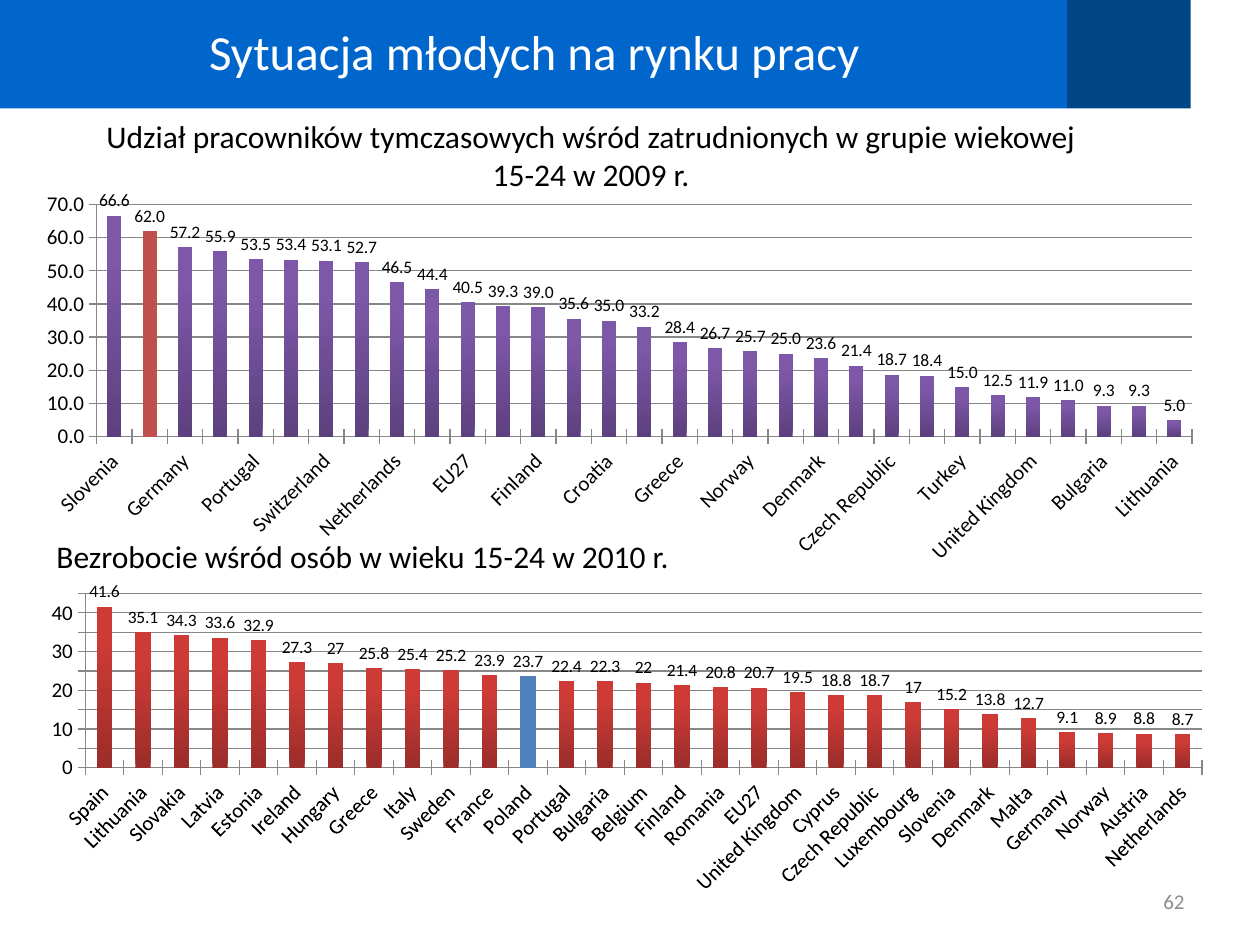
from dataclasses import dataclass

from lxml.etree import SubElement, fromstring
from pptx import Presentation
from pptx.chart.data import CategoryChartData
from pptx.dml.color import RGBColor
from pptx.enum.chart import XL_CHART_TYPE, XL_LABEL_POSITION, XL_TICK_MARK
from pptx.enum.shapes import MSO_SHAPE
from pptx.enum.text import MSO_ANCHOR, PP_ALIGN
from pptx.oxml.ns import qn
from pptx.util import Inches, Pt


@dataclass(frozen=True)
class Theme:
    font: str = "Calibri"
    blue: str = "0066CC"
    navy: str = "004586"
    white: str = "FFFFFF"
    black: str = "000000"
    number: str = "8C8C8C"
    line: str = "878787"
    purple: tuple = ("5D417E", "7D57A8")
    red: tuple = ("9B2D2A", "CE3B37")
    poland_red: str = "C0504D"
    poland_blue: str = "4F81BD"
    title_size: int = 28
    heading_size: int = 18
    body_size: int = 12
    label_size: int = 10


theme = Theme()
deck = Presentation()
deck.slide_width, deck.slide_height = Inches(10), Inches(7.5)
page = deck.slides.add_slide(deck.slide_layouts[6])


def add_text(text, left, top, width, height, size=theme.heading_size,
             color=theme.black, align=PP_ALIGN.LEFT, anchor=MSO_ANCHOR.TOP):
    box = page.shapes.add_textbox(Inches(left), Inches(top), Inches(width), Inches(height))
    frame = box.text_frame
    frame.word_wrap = True
    frame.vertical_anchor = anchor
    para = frame.paragraphs[0]
    para.text = text
    para.alignment = align
    for span in para.runs:
        span.font.name = theme.font
        span.font.size = Pt(size)
        span.font.color.rgb = RGBColor.from_string(color)


def set_font(font, size):
    font.name = theme.font
    font.size = Pt(size)
    font.color.rgb = RGBColor.from_string(theme.black)


banners = [
    (MSO_SHAPE.RECTANGLE, 0, 8.47, theme.blue),
    (MSO_SHAPE.ROUNDED_RECTANGLE, 8.47, 0.98, theme.navy),
]
for kind, left, width, color in banners:
    banner = page.shapes.add_shape(kind, Inches(left), Inches(-0.03), Inches(width), Inches(0.89))
    banner.shadow.inherit = False
    banner.fill.solid()
    banner.fill.fore_color.rgb = RGBColor.from_string(color)
    banner.line.fill.background()
    if kind == MSO_SHAPE.ROUNDED_RECTANGLE:
        banner.adjustments[0] = 0

add_text("Sytuacja młodych na rynku pracy", 0.01, -0.02, 8.46, 0.85, size=theme.title_size,
         color=theme.white, align=PP_ALIGN.CENTER, anchor=MSO_ANCHOR.MIDDLE)
add_text("62", 7.17, 6.95, 2.33, 0.4, size=theme.body_size, color=theme.number,
         align=PP_ALIGN.RIGHT, anchor=MSO_ANCHOR.MIDDLE)

temporary_work = [
    ("Slovenia", 66.6), ("Poland", 62), ("Germany", 57.2), ("Spain", 55.9),
    ("Portugal", 53.5), ("Sweden", 53.4), ("Switzerland", 53.1), ("France", 52.7),
    ("Netherlands", 46.5), ("Italy", 44.4), ("EU27", 40.5), ("Luxembourg", 39.3),
    ("Finland", 39), ("Austria", 35.6), ("Croatia", 35), ("Belgium", 33.2),
    ("Greece", 28.4), ("Iceland", 26.7), ("Norway", 25.7), ("Ireland", 25),
    ("Denmark", 23.6), ("Hungary", 21.4), ("Czech Republic", 18.7), ("Cyprus", 18.4),
    ("Turkey", 15), ("Slovakia", 12.5), ("United Kingdom", 11.9), ("Malta", 11),
    ("Bulgaria", 9.3), ("Latvia", 9.3), ("Lithuania", 5),
]
unemployment = [
    ("Spain", 41.6), ("Lithuania", 35.1), ("Slovakia", 34.3), ("Latvia", 33.6),
    ("Estonia", 32.9), ("Ireland", 27.3), ("Hungary", 27), ("Greece", 25.8),
    ("Italy", 25.4), ("Sweden", 25.2), ("France", 23.9), ("Poland", 23.7),
    ("Portugal", 22.4), ("Bulgaria", 22.3), ("Belgium", 22), ("Finland", 21.4),
    ("Romania", 20.8), ("EU27", 20.7), ("United Kingdom", 19.5), ("Cyprus", 18.8),
    ("Czech Republic", 18.7), ("Luxembourg", 17), ("Slovenia", 15.2), ("Denmark", 13.8),
    ("Malta", 12.7), ("Germany ", 9.1), ("Norway", 8.9), ("Austria", 8.8),
    ("Netherlands", 8.7),
]
charts = [
    (temporary_work, (0.2, 1.47, 9.45, 3.07), (0.06, 0.05, 0.92, 0.6),
     theme.purple, theme.poland_red, "#0.0", 70, 10),
    (unemployment, (0.2, 4.62, 9.53, 2.53), (0.05, 0.03, 0.93, 0.55),
     theme.red, theme.poland_blue, "General", 45, 5),
]
for rows, place, plot_area, shades, highlight, number_format, maximum, step in charts:
    countries, values = zip(*rows)
    data = CategoryChartData()
    data.categories = countries
    data.add_series("Series 1", values)
    chart = page.shapes.add_chart(XL_CHART_TYPE.COLUMN_CLUSTERED, *map(Inches, place), data).chart
    chart.has_legend = False
    chart.has_title = False
    set_font(chart.font, theme.body_size)

    plot = chart.plots[0]
    plot.vary_by_categories = False
    plot.gap_width = 150
    plot.has_data_labels = True
    labels = plot.data_labels
    labels.show_value = True
    labels.position = XL_LABEL_POSITION.OUTSIDE_END
    labels.number_format = number_format
    labels.number_format_is_linked = False
    set_font(labels.font, theme.label_size)

    bars = plot.series[0]
    bars.invert_if_negative = False
    bars.format.fill.gradient()
    bars.format.fill.gradient_angle = 90
    for stop, shade, position in zip(bars.format.fill.gradient_stops, shades, (0, 0.8)):
        stop.color.rgb = RGBColor.from_string(shade)
        stop.position = position
    poland = bars.points[countries.index("Poland")].format.fill
    poland.solid()
    poland.fore_color.rgb = RGBColor.from_string(highlight)

    value_axis, category_axis = chart.value_axis, chart.category_axis
    value_axis.minimum_scale = 0
    value_axis.maximum_scale = maximum
    value_axis.major_unit = step
    value_axis.has_major_gridlines = True
    value_axis.tick_labels.number_format = number_format
    value_axis.tick_labels.number_format_is_linked = False
    for axis in (value_axis, category_axis):
        axis.major_tick_mark = XL_TICK_MARK.CROSS
        axis.format.line.color.rgb = RGBColor.from_string(theme.line)
        set_font(axis.tick_labels.font, theme.body_size)
    value_axis.major_gridlines.format.line.color.rgb = RGBColor.from_string(theme.line)
    category_axis._element.find(qn("c:txPr")).find(qn("a:bodyPr")).set("rot", "-2700000")

    area = chart._chartSpace.chart.plotArea
    for old_layout in area.findall(qn("c:layout")):
        area.remove(old_layout)
    layout = fromstring('<c:layout xmlns:c="http://schemas.openxmlformats.org/drawingml/2006/chart"/>')
    manual = SubElement(layout, qn("c:manualLayout"))
    settings = [("layoutTarget", "inner"), ("xMode", "edge"), ("yMode", "edge"),
                *zip("xywh", plot_area)]
    for name, setting in settings:
        SubElement(manual, qn(f"c:{name}")).set("val", str(setting))
    area.insert(0, layout)

add_text("Udział pracowników tymczasowych wśród zatrudnionych w grupie wiekowej \v15-24 w 2009 r. ",
         0.35, 0.88, 8.74, 0.71, align=PP_ALIGN.CENTER)
add_text("Bezrobocie wśród osób w wieku 15-24 w 2010 r.", 0.35, 4.21, 8.74, 0.4)

deck.save("out.pptx")
